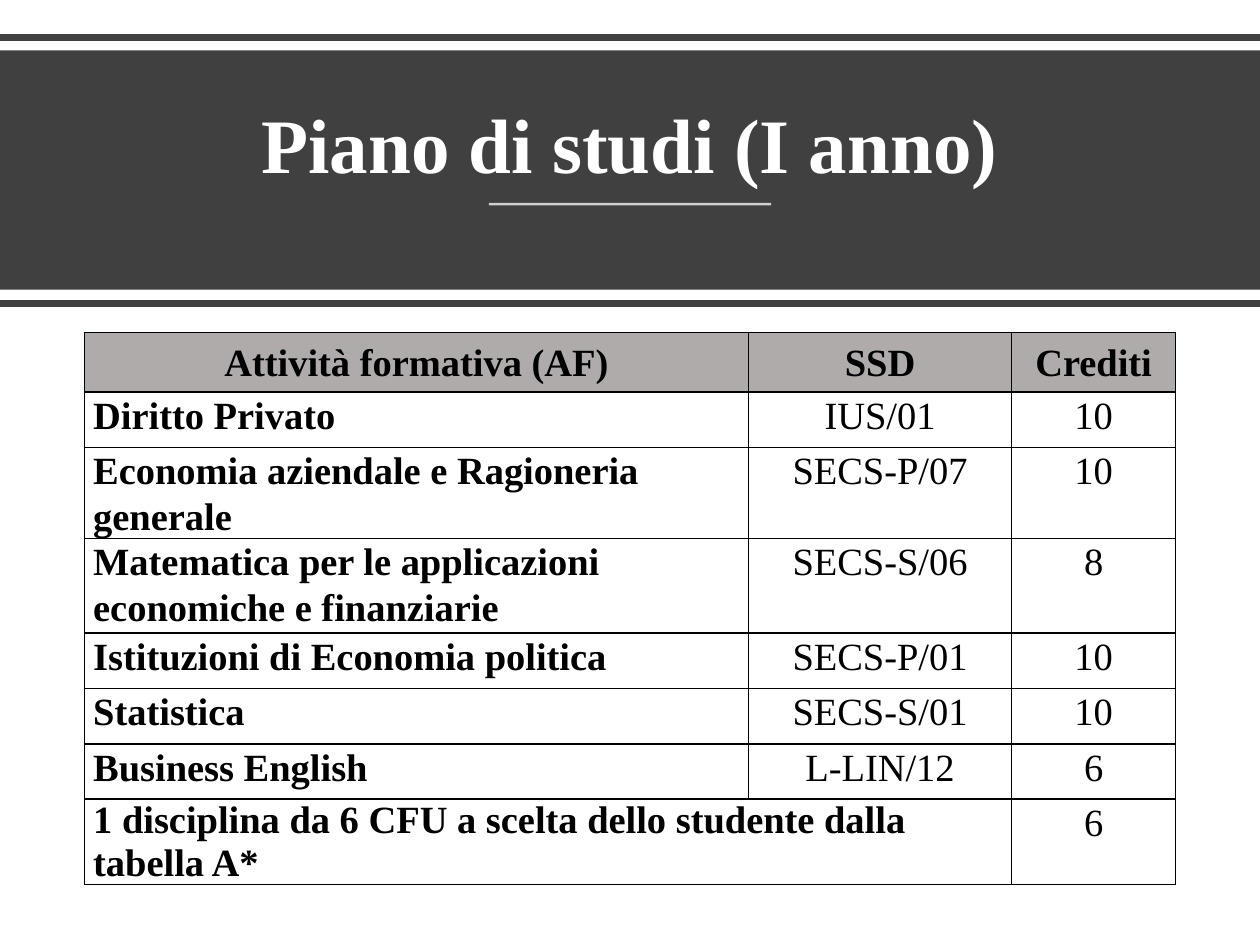
from dataclasses import dataclass

from lxml import etree
from pptx import Presentation
from pptx.dml.color import RGBColor
from pptx.enum import shapes, text
from pptx.oxml import ns
from pptx.util import Inches, Pt


@dataclass(frozen=True)
class Theme:
    """Colours, font and type sizes of the slide."""
    font: str = "Times New Roman"
    dark: str = "404040"
    light: str = "FFFFFF"
    ink: str = "000000"
    header: str = "AFABAB"
    title_size: float = 44
    table_size: float = 22


THEME = Theme()
COLUMNS = (5.27, 2.09, 1.3)
ROW_HEIGHTS = (0.47, 0.44, 0.43, 0.75, 0.44, 0.44, 0.44, 0.43)
ROWS = (
    ("Attività formativa (AF)", "SSD", "Crediti"),
    ("Diritto Privato", "IUS/01", "10"),
    ("Economia aziendale e Ragioneria generale", "SECS-P/07", "10"),
    ("Matematica per le applicazioni economiche e finanziarie", "SECS-S/06", "8"),
    ("Istituzioni di Economia politica", "SECS-P/01", "10"),
    ("Statistica", "SECS-S/01", "10"),
    ("Business English", "L-LIN/12", "6"),
    ("1 disciplina da 6 CFU a scelta dello studente dalla tabella A*", None, "6"),
)


def write(tf, words, *, size, color, bold=False, center=False, spacing=None, after=None):
    """Write one formatted paragraph into a text frame."""
    p = tf.paragraphs[0]
    p.alignment = text.PP_ALIGN.CENTER if center else text.PP_ALIGN.LEFT
    if spacing is not None:
        p.line_spacing = spacing
    if after is not None:
        p.space_after = Pt(after)
    r = p.add_run()
    r.text = words
    r.font.name = THEME.font
    r.font.size = Pt(size)
    r.font.bold = bold
    r.font.color.rgb = RGBColor.from_string(color)


def add_rule(s, x, y, width, color, weight, opacity=None):
    """Draw a horizontal rule without shadow."""
    c = s.shapes.add_connector(shapes.MSO_CONNECTOR.STRAIGHT,
                               Inches(x), Inches(y), Inches(x + width), Inches(y))
    c.line.color.rgb = RGBColor.from_string(color)
    c.line.width = Pt(weight)
    sp_pr = c.element.spPr
    if opacity is not None:
        clr = sp_pr.find(".//" + ns.qn("a:srgbClr"))
        etree.SubElement(clr, ns.qn("a:alpha"), val=str(opacity * 1000))
    etree.SubElement(sp_pr, ns.qn("a:effectLst"))


def add_banner(s, x, y, width, height, title):
    """Place the dark title band with its framing rules."""
    add_rule(s, x, y - 0.1, width, THEME.dark, 4)
    band = s.shapes.add_shape(shapes.MSO_SHAPE.RECTANGLE, Inches(x), Inches(y),
                              Inches(width), Inches(height))
    band.shadow.inherit = False
    band.fill.solid()
    band.fill.fore_color.rgb = RGBColor.from_string(THEME.dark)
    band.line.fill.background()

    sp = s.shapes.title
    sp.left, sp.top = Inches(x + 0.43), Inches(y + 0.14)
    sp.width, sp.height = Inches(width - 0.86), Inches(1.02)
    s.shapes.element.append(sp.element)
    tf = sp.text_frame
    tf.word_wrap = True
    tf.auto_size = text.MSO_AUTO_SIZE.NONE
    tf.vertical_anchor = text.MSO_ANCHOR.BOTTOM
    write(tf, title, size=THEME.title_size, color=THEME.light, bold=True,
          center=True, spacing=0.9)

    accent = 2.24
    add_rule(s, x + (width - accent) / 2, y + 1.22, accent, THEME.light, 1.5, opacity=75)
    add_rule(s, x, y + height + 0.11, width, THEME.dark, 4)


def set_borders(cell):
    """Give a cell thin borders on all four sides."""
    tc_pr = cell._tc.get_or_add_tcPr()
    for i, side in enumerate(("lnL", "lnR", "lnT", "lnB")):
        ln = etree.Element(ns.qn("a:" + side), w=str(Pt(1)))
        fill = etree.SubElement(ln, ns.qn("a:solidFill"))
        etree.SubElement(fill, ns.qn("a:srgbClr"), val=THEME.ink)
        tc_pr.insert(i, ln)


def fill_cell(cell, words, *, header, first, merged):
    """Format one table cell and write its text."""
    cell.margin_left = cell.margin_right = Inches(0.07)
    cell.margin_top = cell.margin_bottom = 0
    cell.vertical_anchor = text.MSO_ANCHOR.MIDDLE if header else text.MSO_ANCHOR.TOP
    if header:
        cell.fill.solid()
        cell.fill.fore_color.rgb = RGBColor.from_string(THEME.header)
    else:
        cell.fill.background()
    set_borders(cell)
    if words is not None:
        write(cell.text_frame, words, size=THEME.table_size, color=THEME.ink,
              bold=header or first, center=header or not first,
              spacing=None if merged else 1.07, after=None if merged else 8)


def add_study_plan(s, x, y, width, height):
    """Place the table of courses, sectors and credits."""
    table = s.shapes.add_table(len(ROWS), len(COLUMNS), Inches(x), Inches(y),
                               Inches(width), Inches(height)).table
    table.horz_banding = False
    table.first_row = False
    for column, w in zip(table.columns, COLUMNS):
        column.width = Inches(w)
    for row, h in zip(table.rows, ROW_HEIGHTS):
        row.height = Inches(h)
    for i, values in enumerate(ROWS):
        merged = values[1] is None
        if merged:
            table.cell(i, 0).merge(table.cell(i, 1))
        for j, words in enumerate(values):
            fill_cell(table.cell(i, j), words, header=i == 0, first=j == 0,
                      merged=merged and j == 0)


def main():
    """Build and save the slide."""
    prs = Presentation()
    prs.slide_width, prs.slide_height = Inches(10), Inches(7.5)
    s = prs.slides.add_slide(prs.slide_layouts[5])
    add_banner(s, 0, 0.4, 10, 1.9, "Piano di studi (I anno)")
    add_study_plan(s, 0.67, 2.64, sum(COLUMNS), sum(ROW_HEIGHTS))
    prs.save("out.pptx")


if __name__ == "__main__":
    main()
